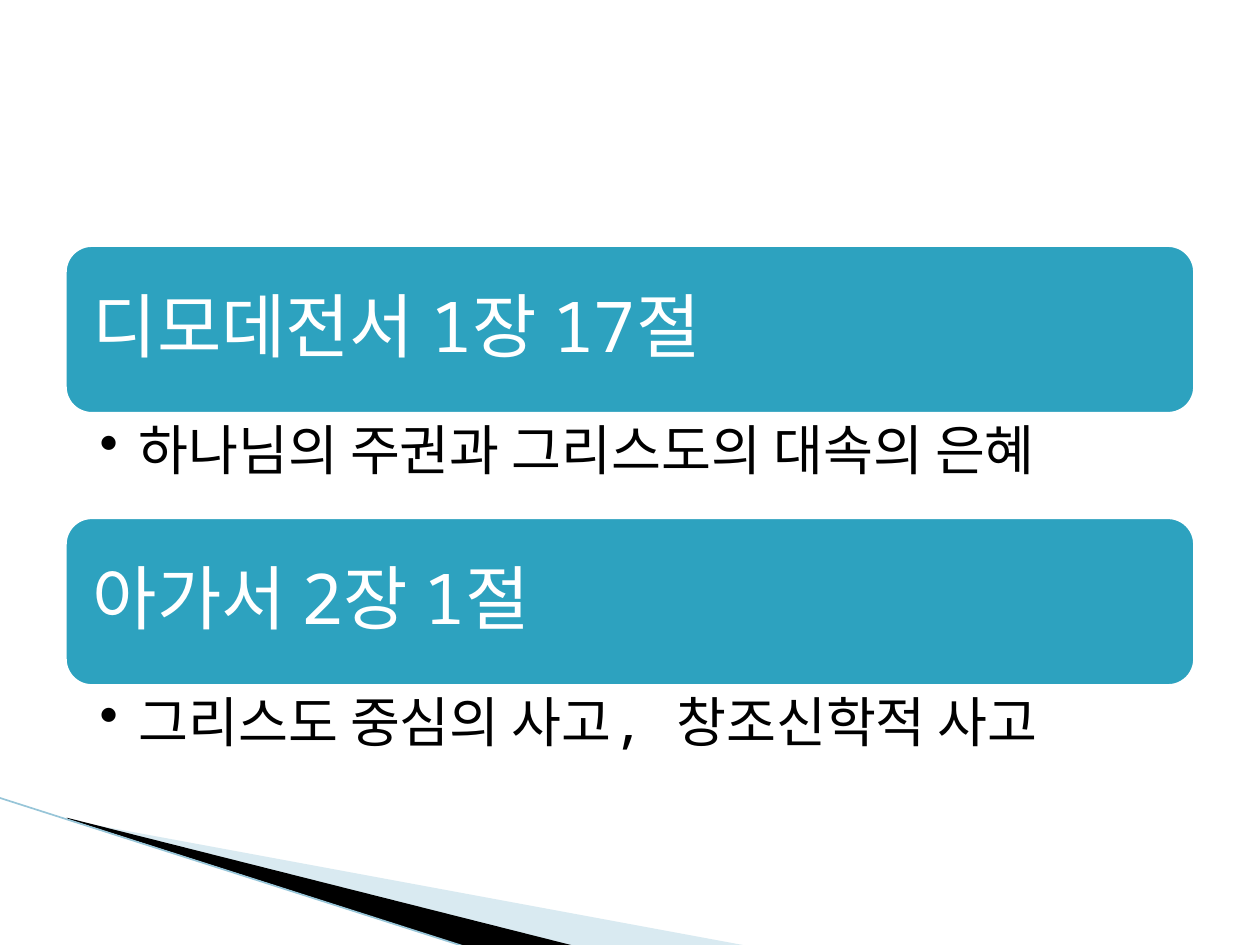
import pptx
import pptx.util
import pptx.dml.color
import pptx.enum.shapes
import pptx.enum.text
import pptx.oxml.ns
from lxml import etree
from pptx.util import Inches

COLORS = {
    "band": "2DA2BF", "white": "FFFFFF", "black": "000000",
    "pale": "A0CBDC", "line": "97C5D8",
}
FONT = "Noto Sans Mono"
qn = pptx.oxml.ns.qn


def rgb(name):
    return pptx.dml.color.RGBColor.from_string(COLORS[name])


def set_text(sp, text, size, color, insets, anchor, after):
    tf = sp.text_frame
    tf.word_wrap = True
    tf.vertical_anchor = anchor
    tf.margin_left, tf.margin_top, tf.margin_right, tf.margin_bottom = map(Inches, insets)
    p = tf.paragraphs[0]
    p.text = text
    p.alignment = pptx.enum.text.PP_ALIGN.LEFT
    p.line_spacing = 0.9
    p.space_after = pptx.util.Pt(after)
    r = p.runs[0]
    r.font.name = FONT
    r.font.size = pptx.util.Pt(size)
    r.font.color.rgb = rgb(color)
    return p


prs = pptx.Presentation()
prs.slide_width, prs.slide_height = Inches(10), Inches(7.5)
s = prs.slides.add_slide(prs.slide_layouts[6])

# Corner wedges
wedges = [
    ("pale", [(0.55, 6.51), (5.95, 7.51), (4.56, 7.51), (0.55, 6.5)]),
    ("black", [(0.53, 6.49), (4.57, 7.51), (3.72, 7.52), (0.54, 6.5)]),
]
for color, points in wedges:
    points = [(Inches(x), Inches(y)) for x, y in points]
    fb = s.shapes.build_freeform(*points[0])
    fb.add_line_segments(points[1:], close=True)
    sp = fb.convert_to_shape()
    sp.shadow.inherit = False
    sp.fill.solid()
    sp.fill.fore_color.rgb = rgb(color)
    sp.line.fill.background()
    if color == "pale":
        clr = sp.fill._xPr.find(qn("a:solidFill"))[0]
        etree.SubElement(clr, qn("a:alpha"), val="40000")

# Corner line
cn = s.shapes.add_connector(
    pptx.enum.shapes.MSO_CONNECTOR.STRAIGHT,
    Inches(-0.01), Inches(6.33), Inches(3.71), Inches(7.52))
cn.line.color.rgb = rgb("line")
cn.line.width = pptx.util.Pt(0.95)
etree.SubElement(cn._element.spPr, qn("a:effectLst"))

# Verse bands, each with a bullet below
verses = [
    ("디모데전서 1장 17절", "하나님의 주권과 그리스도의 대속의 은혜"),
    ("아가서 2장 1절", "그리스도 중심의 사고, 창조신학적 사고"),
]
left, top, width, band_h, note_h = 0.5, 1.93, 9, 1.37, 0.79
for i, (verse, note) in enumerate(verses):
    y = top + i * (band_h + note_h)
    sp = s.shapes.add_shape(
        pptx.enum.shapes.MSO_SHAPE.ROUNDED_RECTANGLE,
        Inches(left), Inches(y), Inches(width), Inches(band_h))
    sp.shadow.inherit = False
    sp.fill.solid()
    sp.fill.fore_color.rgb = rgb("band")
    sp.line.color.rgb = rgb("white")
    sp.line.width = pptx.util.Pt(4.33)
    set_text(sp, verse, 40, "white", [0.17] * 4,
             pptx.enum.text.MSO_ANCHOR.MIDDLE, 14)

    tb = s.shapes.add_textbox(
        Inches(left), Inches(y + band_h), Inches(width), Inches(note_h))
    p = set_text(tb, note, 31, "black", [0.29, 0.06, 0.31, 0.06],
                 pptx.enum.text.MSO_ANCHOR.TOP, 6)
    p.level = 1
    pPr = p._p.get_or_add_pPr()
    pPr.set("marL", str(Inches(0.31)))
    pPr.set("indent", str(Inches(-0.31)))
    etree.SubElement(pPr, qn("a:buChar"), char="•")

prs.save("out.pptx")
